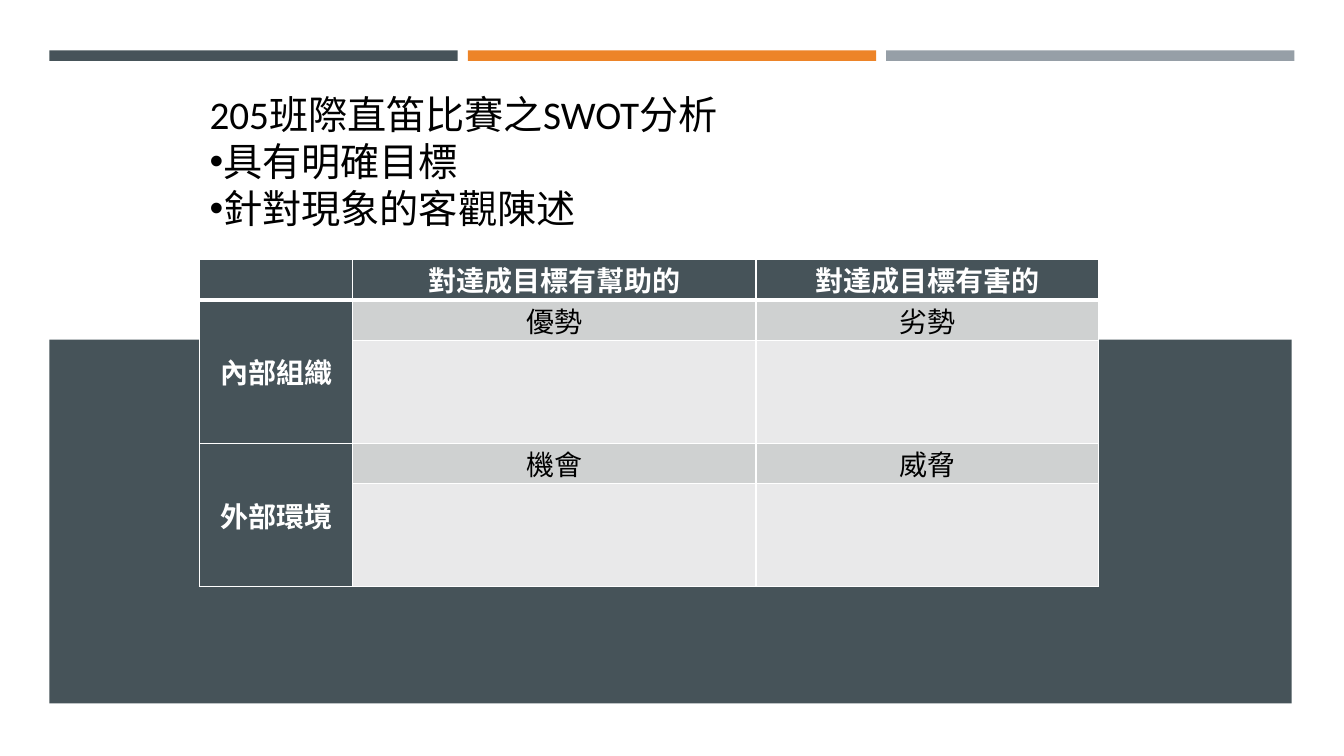
from dataclasses import dataclass

from lxml.etree import SubElement
from pptx import Presentation
from pptx.dml.color import RGBColor
from pptx.enum.shapes import MSO_SHAPE
from pptx.enum.text import MSO_ANCHOR, PP_ALIGN
from pptx.oxml.ns import qn
from pptx.util import Emu, Inches, Pt


@dataclass(frozen=True)
class Theme:
    slate: str = "465359"
    orange: str = "ED8428"
    grey: str = "969FA7"
    label: str = "CFD1D1"
    pale: str = "E9E9EA"
    white: str = "FFFFFF"
    black: str = "000000"
    heading_font: str = "Calibri"
    table_font: str = "Cabin"
    heading_size: int = 28
    table_size: int = 20
    rule: int = 1
    header_rule: int = 3


class SlideBuilder:
    """Draws styled elements, with lengths in percent of the slide's size."""

    def __init__(self, deck, theme):
        self.theme = theme
        self.width, self.height = deck.slide_width, deck.slide_height
        self.shapes = deck.slides.add_slide(deck.slide_layouts[6]).shapes

    def x(self, percent):
        return Emu(round(self.width * percent / 100))

    def y(self, percent):
        return Emu(round(self.height * percent / 100))

    def area(self, left, top, width, height):
        return self.x(left), self.y(top), self.x(width), self.y(height)

    def apply(self, target, values):
        for name, value in values.items():
            setattr(target, name, value)

    def paint(self, fill, color):
        fill.solid()
        fill.fore_color.rgb = RGBColor.from_string(color)

    def add_wording(self, paragraph, wording, color, **font_values):
        run = paragraph.add_run()
        run.text = wording
        self.apply(run.font, font_values)
        run.font.color.rgb = RGBColor.from_string(color)

    def block(self, color, *area):
        block = self.shapes.add_shape(MSO_SHAPE.RECTANGLE, *self.area(*area))
        block.shadow.inherit = False
        block.line.fill.background()
        self.paint(block.fill, color)

    def heading(self, title, points, *area):
        frame = self.shapes.add_textbox(*self.area(*area)).text_frame
        self.apply(frame, {"word_wrap": True, "vertical_anchor": MSO_ANCHOR.TOP})
        for index, wording in enumerate([title, *points]):
            paragraph = frame.add_paragraph() if index else frame.paragraphs[0]
            self.add_wording(paragraph, wording, self.theme.black,
                             name=self.theme.heading_font, size=Pt(self.theme.heading_size))
            if index:
                properties = paragraph._p.get_or_add_pPr()
                properties.set("marL", "0")
                properties.set("indent", "0")
                SubElement(properties, qn("a:buFont"), typeface="Arial")
                SubElement(properties, qn("a:buChar"), char="•")

    def border(self, cell, **widths):
        properties = cell._tc.get_or_add_tcPr()
        for side in "LRTB":
            width = Pt(widths.get(side, self.theme.rule))
            line = SubElement(properties, qn(f"a:ln{side}"), w=str(width))
            fill = SubElement(line, qn("a:solidFill"))
            SubElement(fill, qn("a:srgbClr"), val=self.theme.white)

    def cell(self, cell, wording, fill, strong, **borders):
        self.border(cell, **borders)
        self.paint(cell.fill, fill)
        self.apply(cell, {
            "margin_left": Inches(0.04), "margin_right": Inches(0.04),
            "margin_top": 0, "margin_bottom": 0,
            "vertical_anchor": MSO_ANCHOR.MIDDLE if strong else MSO_ANCHOR.TOP,
        })
        paragraph = cell.text_frame.paragraphs[0]
        paragraph.alignment = PP_ALIGN.CENTER
        if wording:
            self.add_wording(paragraph, wording, self.theme.white if strong else self.theme.black,
                             name=self.theme.table_font, size=Pt(self.theme.table_size), bold=strong)

    def table(self, rows, left, top, columns, heights):
        table = self.shapes.add_table(
            len(rows), len(columns), *self.area(left, top, sum(columns), sum(heights))).table
        for column, width in zip(table.columns, columns):
            column.width = self.x(width)
        for row, height in zip(table.rows, heights):
            row.height = self.y(height)
        for r, wordings in enumerate(rows):
            for c, wording in enumerate(wordings):
                strong = r == 0 or c == 0
                fill = self.theme.slate if strong else self.theme.label if wording else self.theme.pale
                edge = {0: "B", 1: "T"}.get(r)
                borders = {edge: self.theme.header_rule} if edge else {}
                self.cell(table.cell(r, c), wording, fill, strong, **borders)
        for r in range(1, len(rows), 2):
            table.cell(r, 0).merge(table.cell(r + 1, 0))


def main():
    deck = Presentation()
    deck.slide_width, deck.slide_height = Inches(13.33), Inches(7.5)
    theme = Theme()
    slide = SlideBuilder(deck, theme)

    margin, bar_width, bar_pitch = 3.68, 30.38, 31.13
    for index, color in enumerate([theme.slate, theme.orange, theme.grey]):
        slide.block(color, margin + index * bar_pitch, 6.67, bar_width, 1.4)
    slide.block(theme.slate, margin, 44.93, 92.42, 48.13)

    content_left, label_height, answer_height = 14.85, 4.93, 13.6
    slide.table(
        [["", "對達成目標有幫助的", "對達成目標有害的"],
         ["內部組織", "優勢", "劣勢"],
         ["", "", ""],
         ["外部環境", "機會", "威脅"],
         ["", "", ""]],
        content_left, 34.27, [11.4, 30, 25.5],
        [label_height] + [label_height, answer_height] * 2)
    slide.heading("205班際直笛比賽之SWOT分析", ["具有明確目標", "針對現象的客觀陳述"],
                  content_left, 11.33, 49, 24.27)

    deck.save("out.pptx")


if __name__ == "__main__":
    main()
